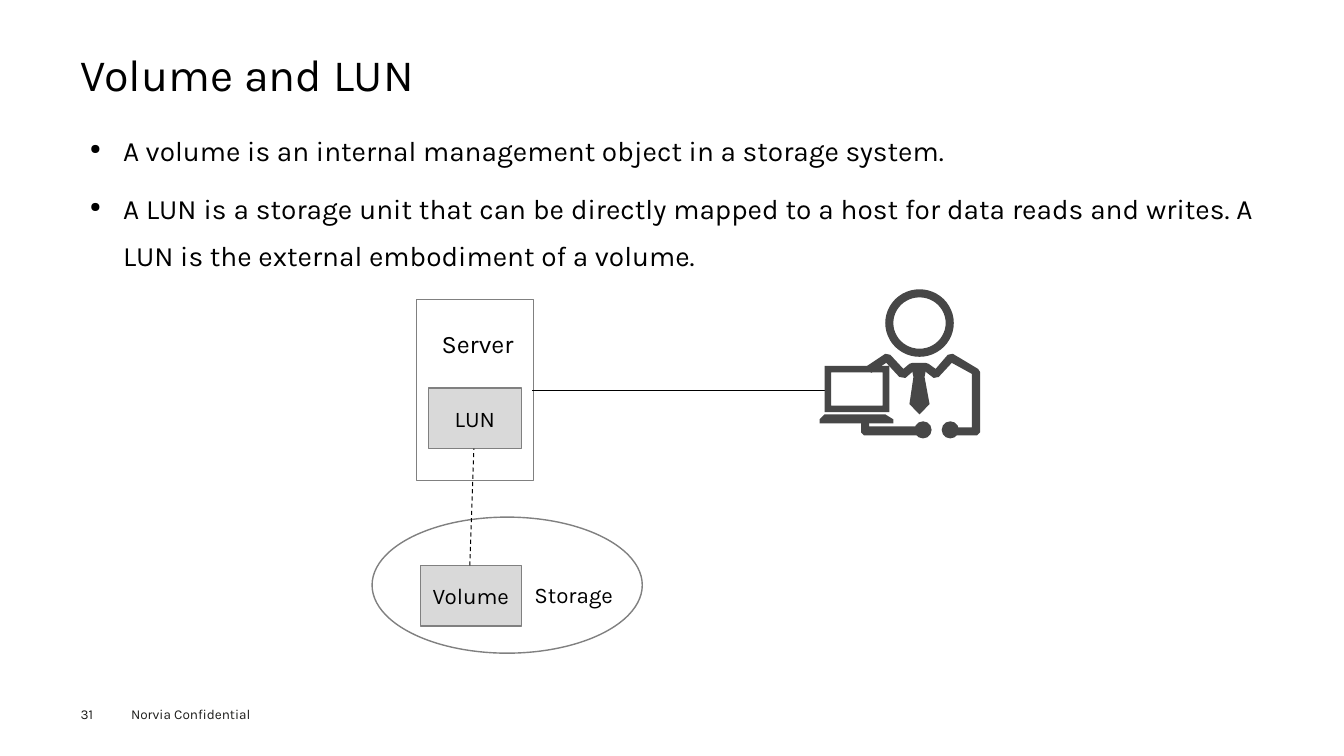
from pptx import Presentation
from pptx.dml.color import RGBColor
from pptx.enum.dml import MSO_LINE_DASH_STYLE as DASH
from pptx.enum.shapes import MSO_CONNECTOR as CONN, MSO_SHAPE as SHAPE
from pptx.enum.text import MSO_ANCHOR as ANCHOR, PP_ALIGN as ALIGN
from pptx.oxml.ns import qn
from pptx.util import Emu, Pt
from lxml.etree import SubElement

PX = 9144
BLACK = RGBColor(0x00, 0x00, 0x00)
INK = RGBColor(0x1D, 0x1D, 0x1B)
DARK = RGBColor(0x47, 0x47, 0x47)
GREY = RGBColor(0x80, 0x80, 0x80)
LIGHT = RGBColor(0xD9, 0xD9, 0xD9)
WHITE = RGBColor(0xFF, 0xFF, 0xFF)

BULLETS = [
    "A volume is an internal management object in a storage system.",
    "A LUN is a storage unit that can be directly mapped to a host for data reads "
    "and writes. A LUN is the external embodiment of a volume.",
]
LAPTOP_BASE = [(818, 411), (878, 411), (886, 416), (886, 420), (813, 420), (813, 416)]
ARM = [(854, 418), (862, 418), (862, 423), (918, 423), (918, 432), (857, 432),
       (854, 429)]
JACKET = [(947, 432), (947, 424), (964, 424), (964, 371), (944, 360), (931, 374),
          (926, 375), (917, 368), (906, 368), (898, 375), (892, 374), (879, 360),
          (864, 370), (860, 363), (878, 351), (883, 352), (896, 366), (902, 361),
          (905, 360), (918, 360), (921, 361), (928, 366), (940, 352), (945, 351),
          (970, 366), (972, 369), (972, 429), (969, 432)]
TIE = [(904, 364), (906, 374), (902, 401), (912, 411), (922, 401), (917, 374),
       (919, 364)]


class Sketch:
    """Draws styled elements on one slide, with lengths in px."""

    font = "Karla"

    def __init__(self, prs):
        self.s = prs.slides.add_slide(prs.slide_layouts[6])
        self.shapes = self.s.shapes

    def group(self):
        self.shapes = self.s.shapes.add_group_shape().shapes

    def fill_text(self, sp, lines, size, color=BLACK, align=ALIGN.LEFT,
                  anchor=ANCHOR.TOP, bullet=None, **para):
        tf = sp.text_frame
        frame = dict(word_wrap=True, vertical_anchor=anchor, margin_left=0,
                     margin_top=0, margin_right=0, margin_bottom=0)
        for name, value in frame.items():
            setattr(tf, name, value)
        for i, line in enumerate(lines):
            p = tf.paragraphs[0] if i == 0 else tf.add_paragraph()
            if bullet:
                self.bullet(p, bullet)
            for name, value in dict(para, alignment=align).items():
                setattr(p, name, value)
            if i == 0:
                p.space_before = Pt(0)
            r = p.add_run()
            r.text = line
            for name, value in dict(name=self.font, size=Pt(size)).items():
                setattr(r.font, name, value)
            r.font.color.rgb = color

    def bullet(self, p, char, indent=33):
        pPr = p._p.get_or_add_pPr()
        pPr.set("marL", str(indent * PX))
        pPr.set("indent", str(-indent * PX))
        SubElement(pPr, qn("a:buSzPct"), val="50000")
        SubElement(pPr, qn("a:buChar"), char=char)

    def text(self, box, lines, size, **style):
        sp = self.shapes.add_textbox(*(Emu(v * PX) for v in box))
        self.fill_text(sp, lines, size, **style)

    def paint(self, sp, fill, line):
        sp.shadow.inherit = False
        for part, color in ((sp.fill, fill), (sp.line.fill, line)):
            if color is None:
                part.background()
            else:
                part.solid()
                part.fore_color.rgb = color
        if line is not None:
            sp.line.width = Pt(1)

    def shape(self, kind, box, fill=None, line=None, label=None, adj=None):
        sp = self.shapes.add_shape(kind, *(Emu(v * PX) for v in box))
        self.paint(sp, fill, line)
        if adj is not None:
            sp.adjustments[0] = adj
        if label:
            self.fill_text(sp, [label], 16, align=ALIGN.CENTER, anchor=ANCHOR.MIDDLE)

    def outline(self, points, fill):
        fb = self.shapes.build_freeform(*points[0], scale=PX)
        fb.add_line_segments(points[1:], close=True)
        self.paint(fb.convert_to_shape(), fill, None)

    def link(self, ends, dash=None):
        c = self.shapes.add_connector(CONN.STRAIGHT, *(Emu(v * PX) for v in ends))
        for name, value in dict(width=Pt(0.75), dash_style=dash).items():
            setattr(c.line, name, value)
        c.line.color.rgb = BLACK
        SubElement(c._element.spPr, qn("a:effectLst"))


def main():
    prs = Presentation()
    prs.slide_width, prs.slide_height = Emu(1333 * PX), Emu(750 * PX)
    sk = Sketch(prs)

    sk.text((130, 700, 160, 17), ["Norvia Confidential"], 9.7, color=INK)
    sk.text((80, 700, 45, 16), ["31"], 9.7, color=INK)
    sk.text((80, 49, 1173, 54), ["Volume and LUN"], 32, anchor=ANCHOR.MIDDLE,
            line_spacing=0.9)
    sk.text((89, 119, 1155, 525), BULLETS, 20, align=ALIGN.JUSTIFY, bullet="●",
            line_spacing=1.4, space_before=Pt(7.9))

    sk.shape(SHAPE.OVAL, (369, 513, 268, 135), line=GREY)
    sk.shape(SHAPE.RECTANGLE, (417, 561, 100, 60), LIGHT, GREY, "Volume")
    sk.shape(SHAPE.RECTANGLE, (413, 297, 116, 180), WHITE, GREY)
    sk.shape(SHAPE.RECTANGLE, (425, 385, 92, 60), LIGHT, GREY, "LUN")
    sk.link((466, 561, 470, 445), DASH.DASH)
    sk.text((438, 326, 82, 30), ["Server"], 18)
    sk.text((530, 577, 89, 27), ["Storage"], 16)
    sk.link((528, 387, 818, 387))

    sk.group()
    for points in (LAPTOP_BASE, ARM, JACKET, TIE):
        sk.outline(points, DARK)
    sk.shape(SHAPE.DONUT, (878, 287, 68, 67), DARK, adj=0.12)
    sk.shape(SHAPE.FRAME, (818, 363, 64, 46), DARK, adj=0.14)
    for x in (907, 934):
        sk.shape(SHAPE.OVAL, (x, 418, 17, 17), DARK)

    prs.save("out.pptx")


if __name__ == "__main__":
    main()
